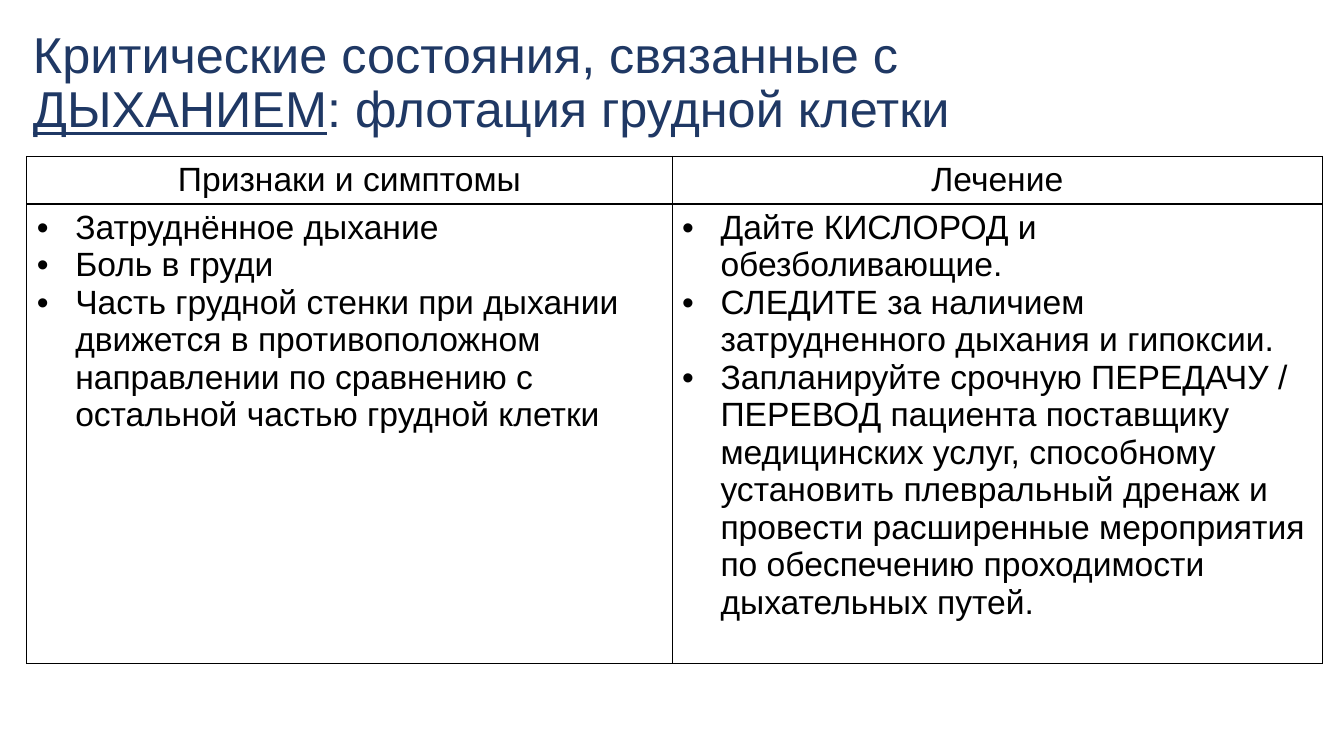
from dataclasses import dataclass

import pptx
import pptx.dml.color
import pptx.enum.text
import pptx.oxml
import pptx.oxml.ns
import pptx.util

SLIDE_WIDTH = pptx.util.Inches(13.33)
SLIDE_HEIGHT = pptx.util.Inches(7.5)
NAVY = pptx.dml.color.RGBColor(0x1F, 0x38, 0x64)
BLACK = pptx.dml.color.RGBColor(0, 0, 0)
FONT = "Arial"
TITLE_ONLY_LAYOUT = 5
BORDER_WIDTH = pptx.util.Pt(1)
BULLET_INDENT = pptx.util.Inches(0.38)
ROW_HEIGHTS = (pptx.util.Inches(0.47), pptx.util.Inches(4.56))


@dataclass(frozen=True)
class Column:
    heading: str
    width: int
    points: tuple[str, ...]


COLUMNS = (
    Column("Признаки и симптомы", pptx.util.Inches(6.4), (
        "Затруднённое дыхание",
        "Боль в груди",
        "Часть грудной стенки при дыхании движется в противоположном "
        "направлении по сравнению с остальной частью грудной клетки",
    )),
    Column("Лечение", pptx.util.Inches(6.45), (
        "Дайте КИСЛОРОД и обезболивающие.",
        "СЛЕДИТЕ за наличием затрудненного дыхания и гипоксии.",
        "Запланируйте срочную ПЕРЕДАЧУ / ПЕРЕВОД пациента поставщику "
        "медицинских услуг, способному установить плевральный дренаж и "
        "провести расширенные мероприятия по обеспечению проходимости "
        "дыхательных путей.",
    )),
)


def set_font(para, size: int, color: pptx.dml.color.RGBColor) -> None:
    para.font.name = FONT
    para.font.size = pptx.util.Pt(size)
    para.font.color.rgb = color


def add_bullet(para) -> None:
    properties = para._p.get_or_add_pPr()
    properties.set("marL", str(BULLET_INDENT))
    properties.set("indent", str(-BULLET_INDENT))
    namespace = pptx.oxml.ns.nsdecls("a")
    for markup in (
        f'<a:buClr {namespace}><a:srgbClr val="{BLACK}"/></a:buClr>',
        f'<a:buFont {namespace} typeface="{FONT}"/>',
        f'<a:buChar {namespace} char="•"/>',
    ):
        properties.append(pptx.oxml.parse_xml(markup))


def style_cell(cell) -> None:
    """Clear the fill and draw a thin black border on all four sides."""
    properties = cell._tc.get_or_add_tcPr()
    for side in ("lnL", "lnR", "lnT", "lnB"):
        properties.append(pptx.oxml.parse_xml(
            f'<a:{side} {pptx.oxml.ns.nsdecls("a")} w="{BORDER_WIDTH}">'
            f'<a:solidFill><a:srgbClr val="{BLACK}"/></a:solidFill></a:{side}>'
        ))
    cell.fill.background()


def fill_title(title) -> None:
    title.left, title.top = int(SLIDE_WIDTH * 0.017), int(SLIDE_HEIGHT * 0.015)
    title.width, title.height = int(SLIDE_WIDTH * 0.865), int(SLIDE_HEIGHT * 0.193)
    frame = title.text_frame
    frame.word_wrap = True
    frame.auto_size = pptx.enum.text.MSO_AUTO_SIZE.NONE
    frame.vertical_anchor = pptx.enum.text.MSO_ANCHOR.MIDDLE
    para = frame.paragraphs[0]
    para.alignment = pptx.enum.text.PP_ALIGN.LEFT
    para.line_spacing = 0.9
    set_font(para, 36, NAVY)
    for text, underlined in (
        ("Критические состояния, связанные с ", False),
        ("ДЫХАНИЕМ", True),
        (": флотация грудной клетки", False),
    ):
        span = para.add_run()
        span.text = text
        span.font.underline = underlined


def add_care_table(page) -> None:
    table = page.shapes.add_table(
        len(ROW_HEIGHTS), len(COLUMNS),
        int(SLIDE_WIDTH * 0.02), int(SLIDE_HEIGHT * 0.207),
        sum(column.width for column in COLUMNS), sum(ROW_HEIGHTS),
    ).table
    table.first_row = table.horz_banding = False
    for row, height in zip(table.rows, ROW_HEIGHTS):
        row.height = height
    for index, column in enumerate(COLUMNS):
        table.columns[index].width = column.width
        heading, body = table.cell(0, index), table.cell(1, index)
        heading.text = column.heading
        heading.text_frame.paragraphs[0].alignment = pptx.enum.text.PP_ALIGN.CENTER
        body.text = "\n".join(column.points)
        for para in body.text_frame.paragraphs:
            add_bullet(para)
        for cell in (heading, body):
            style_cell(cell)
            for para in cell.text_frame.paragraphs:
                set_font(para, 24, BLACK)


def main() -> None:
    deck = pptx.Presentation()
    deck.slide_width, deck.slide_height = SLIDE_WIDTH, SLIDE_HEIGHT
    page = deck.slides.add_slide(deck.slide_layouts[TITLE_ONLY_LAYOUT])
    fill_title(page.shapes.title)
    add_care_table(page)
    deck.save("out.pptx")


if __name__ == "__main__":
    main()
